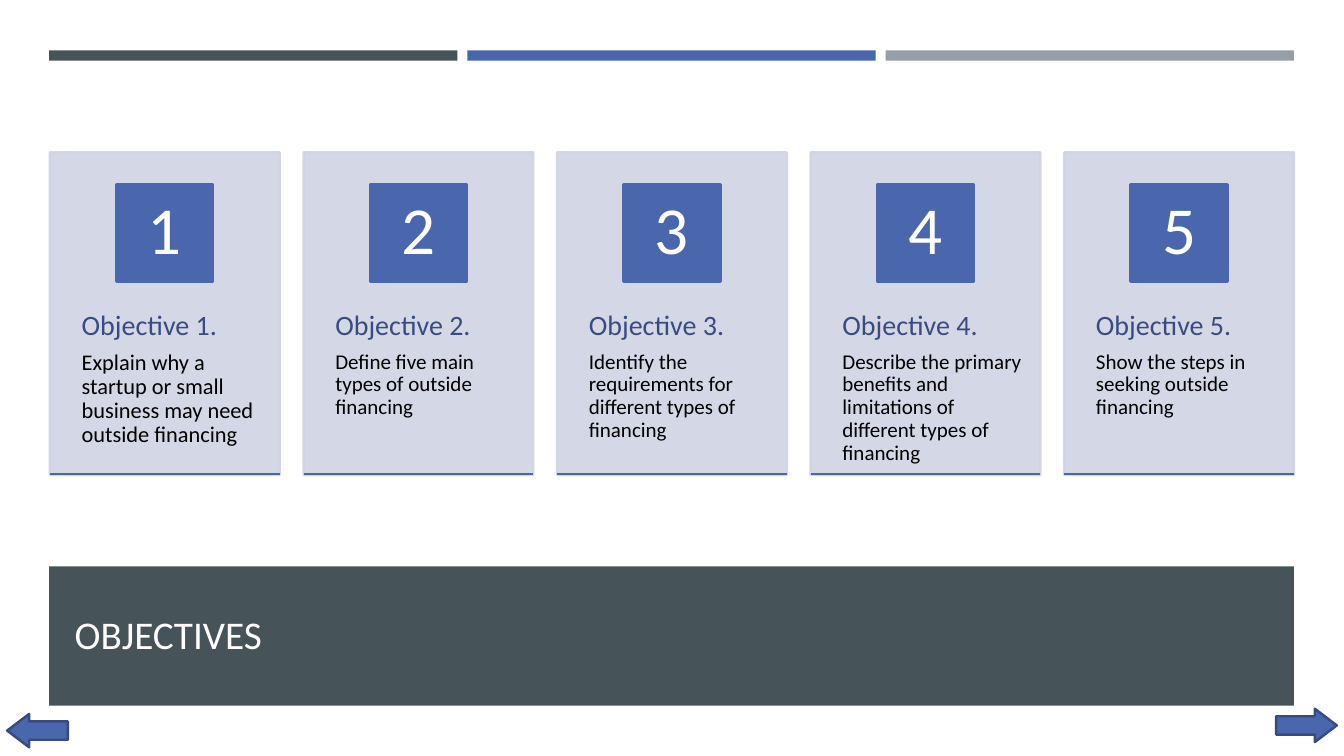
from lxml.etree import SubElement
from pptx import Presentation
from pptx.dml.color import RGBColor
from pptx.enum.shapes import MSO_CONNECTOR, MSO_SHAPE
from pptx.enum.text import MSO_ANCHOR, PP_ALIGN
from pptx.oxml.ns import qn
from pptx.util import Cm, Pt

SLATE = RGBColor(0x46, 0x53, 0x59)
BLUE = RGBColor(0x4A, 0x66, 0xAC)
GREY = RGBColor(0x96, 0x9F, 0xA7)
PALE = RGBColor(0xD0, 0xD3, 0xE3)
NAVY = RGBColor(0x38, 0x4C, 0x81)
EDGE = RGBColor(0x37, 0x4B, 0x7F)
BLACK = RGBColor(0, 0, 0)
WHITE = RGBColor(0xFF, 0xFF, 0xFF)
CREAM = RGBColor(0xFF, 0xFE, 0xFF)

FONT = "Calibri"
STROKE = Pt(1.75)
LEFT, STEP, WIDTH = 1.26, 6.39, 5.79
SIDE = 2.44
GOALS = [
    ("Explain why a startup or small business may need outside financing", 16),
    ("Define five main types of outside financing", 15),
    ("Identify the requirements for different types of financing", 15),
    ("Describe the primary benefits and limitations of different types of financing", 15),
    ("Show the steps in seeking outside financing", 15),
]


def add_box(slide, box, fill, edge=None, kind=MSO_SHAPE.RECTANGLE):
    shape = slide.shapes.add_shape(kind, *map(Cm, box))
    shape.shadow.inherit = False
    shape.fill.solid()
    shape.fill.fore_color.rgb = fill
    if edge is None:
        shape.line.fill.background()
    else:
        shape.line.color.rgb = edge
        shape.line.width = STROKE
    return shape


def fade(shape, share):
    """Set the opacity of fill and line, in percent."""
    for color in shape.element.spPr.iter(qn("a:srgbClr")):
        SubElement(color, qn("a:alpha")).set("val", str(share * 1000))


def add_run(para, text, size, color):
    run = para.add_run()
    run.text = text
    run.font.name = FONT
    run.font.size = Pt(size)
    run.font.color.rgb = color


def set_frame(frame, insets, anchor):
    frame.word_wrap = True
    frame.vertical_anchor = anchor
    (frame.margin_left, frame.margin_top,
     frame.margin_right, frame.margin_bottom) = map(Cm, insets)


def add_rule(slide, left, top, width):
    rule = slide.shapes.add_connector(
        MSO_CONNECTOR.STRAIGHT, Cm(left), Cm(top), Cm(left + width), Cm(top))
    rule.line.color.rgb = BLUE
    rule.line.width = STROKE
    SubElement(rule.element.spPr, qn("a:effectLst"))


def add_card(slide, index, goal, size):
    left = LEFT + index * STEP
    fade(add_box(slide, (left, 3.84, WIDTH, 8.13), PALE, PALE), 90)

    note = slide.shapes.add_textbox(Cm(left), Cm(6.93), Cm(WIDTH), Cm(4.88))
    frame = note.text_frame
    set_frame(frame, (0.8, 0.91, 0.45, 0.91), MSO_ANCHOR.TOP)
    head, body = frame.paragraphs[0], frame.add_paragraph()
    add_run(head, f"Objective {index + 1}.", 20, NAVY)
    add_run(body, goal, size, BLACK)
    head.line_spacing = body.line_spacing = 0.9
    head.space_after = Pt(7)

    badge = add_box(
        slide, (left + (WIDTH - SIDE) / 2, 4.65, SIDE, SIDE), BLUE, BLUE)
    set_frame(badge.text_frame, (0.19, 0.03, 0.19, 0.03), MSO_ANCHOR.MIDDLE)
    digit = badge.text_frame.paragraphs[0]
    digit.alignment = PP_ALIGN.CENTER
    digit.line_spacing = 0.9
    add_run(digit, str(index + 1), 48, WHITE)

    add_rule(slide, left, 11.95, WIDTH)


def add_title(slide, text):
    title = slide.shapes.title
    band = add_box(slide, (1.24, 14.27, 31.37, 3.51), SLATE)
    title.element.addprevious(band.element)
    title.left, title.top, title.width, title.height = map(
        Cm, (1.63, 14.63, 30.63, 2.67))
    set_frame(title.text_frame, (0.25, 0.13, 0.25, 0.13), MSO_ANCHOR.MIDDLE)
    para = title.text_frame.paragraphs[0]
    para.alignment = PP_ALIGN.LEFT
    add_run(para, text, 28, CREAM)


def add_arrow(slide, left, top, turn):
    arrow = add_box(
        slide, (left, top, 1.53, 0.84), BLUE, EDGE, MSO_SHAPE.RIGHT_ARROW)
    arrow.adjustments[0] = 0.55
    arrow.adjustments[1] = 0.66
    arrow.rotation = turn


def main():
    deck = Presentation()
    deck.slide_width, deck.slide_height = Cm(33.87), Cm(19.05)
    slide = deck.slides.add_slide(deck.slide_layouts[5])
    add_title(slide, "OBJECTIVES")
    for index, color in enumerate((SLATE, BLUE, GREY)):
        add_box(slide, (1.24 + index * 10.54, 1.27, 10.29, 0.26), color)
    for index, (goal, size) in enumerate(GOALS):
        add_card(slide, index, goal, size)
    add_arrow(slide, 32.16, 17.86, 0)
    add_arrow(slide, 0.18, 17.99, 180)
    deck.save("out.pptx")


if __name__ == "__main__":
    main()
